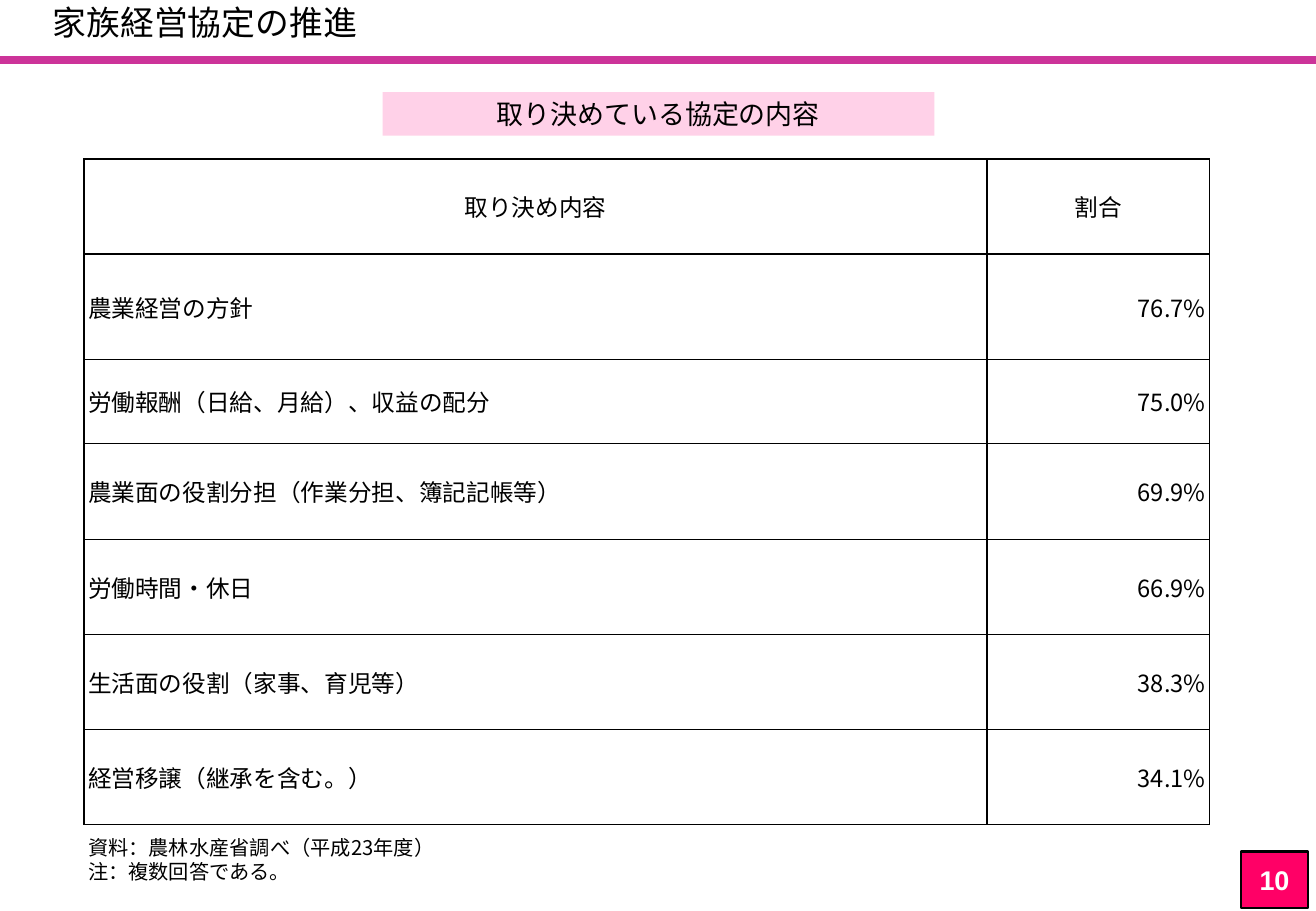
from lxml import etree
from pptx import Presentation
from pptx import util as u
from pptx.dml.color import RGBColor
from pptx.enum import shapes, text
from pptx.oxml import ns

EMU_PER_PX = 7620  # 120 px to the inch
ALIGN = text.PP_ALIGN


def px(*lengths):
    return [u.Emu(length * EMU_PER_PX) for length in lengths]


def color(hex_string):
    return RGBColor.from_string(hex_string)


def child(parent, tag, **attributes):
    return etree.SubElement(parent, ns.qn(tag), attributes)


class AgreementSlide:
    FONT = "Noto Sans CJK JP"
    INK = "000000"
    TIGHT = (4, 2, 4, 2)
    ROOMY = (12, 6, 12, 6)

    def __init__(self, deck):
        self.page = deck.slides.add_slide(deck.slide_layouts[5])

    def fill_text(self, frame, lines, size, align=ALIGN.LEFT, font=FONT, ink=INK, bold=False):
        frame.vertical_anchor = text.MSO_ANCHOR.MIDDLE
        for index, line in enumerate(lines):
            para = frame.add_paragraph() if index else frame.paragraphs[0]
            para.alignment = align
            span = para.add_run()
            span.text = line
            span.font.name = font
            span.font.size = u.Pt(size)
            span.font.bold = bold
            span.font.color.rgb = color(ink)
            child(span.font._element, "a:ea", typeface=font)

    def inset(self, target, margins):
        """Set the inner margins of a text frame or table cell."""
        (target.margin_left, target.margin_top,
         target.margin_right, target.margin_bottom) = px(*margins)

    def title(self, place, words, size, margins):
        box = self.page.shapes.title
        box.left, box.top, box.width, box.height = px(*place)
        frame = box.text_frame
        frame.auto_size = text.MSO_AUTO_SIZE.NONE
        frame.word_wrap = True
        self.inset(frame, margins)
        self.fill_text(frame, [words], size)

    def text_box(self, place, lines, size):
        frame = self.page.shapes.add_textbox(*px(*place)).text_frame
        frame.word_wrap = True
        self.inset(frame, self.TIGHT)
        self.fill_text(frame, lines, size)

    def label(self, kind, place, fill, words, alpha=None, outline=None, **style):
        """Add a filled shape with one centred line of text."""
        box = self.page.shapes.add_shape(kind, *px(*place))
        box.shadow.inherit = False
        box.fill.solid()
        box.fill.fore_color.rgb = color(fill)
        if alpha:
            fill_color = box._element.spPr.find(".//" + ns.qn("a:srgbClr"))
            child(fill_color, "a:alpha", val=str(alpha * 1000))
        if outline:
            box.line.color.rgb = color(outline)
            box.line.width = u.Pt(1.5)
        else:
            box.line.fill.background()
        box.text_frame.word_wrap = False
        self.inset(box.text_frame, self.ROOMY)
        self.fill_text(box.text_frame, [words], 16, ALIGN.CENTER, **style)
        return box

    def rule(self, ends, stroke, width):
        line = self.page.shapes.add_connector(shapes.MSO_CONNECTOR.STRAIGHT, *px(*ends))
        line.line.color.rgb = color(stroke)
        line.line.width = u.Pt(width)
        child(line._element.spPr, "a:effectLst")

    def border(self, cell):
        properties = cell._tc.get_or_add_tcPr()
        for side in "LRTB":
            edge = child(properties, f"a:ln{side}", w=str(u.Pt(1)))
            child(child(edge, "a:solidFill"), "a:srgbClr", val=self.INK)

    def table(self, corner, widths, heights, rows):
        place = px(*corner, sum(widths), sum(heights))
        grid = self.page.shapes.add_table(len(rows), len(widths), *place).table
        grid.first_row = grid.horz_banding = False
        for column, width in zip(grid.columns, px(*widths)):
            column.width = width
        for row, height in zip(grid.rows, px(*heights)):
            row.height = height
        for row_index, values in enumerate(rows):
            aligns = (ALIGN.LEFT, ALIGN.RIGHT) if row_index else (ALIGN.CENTER,) * 2
            for column_index, (value, align) in enumerate(zip(values, aligns)):
                cell = grid.cell(row_index, column_index)
                self.border(cell)
                cell.fill.background()
                self.inset(cell, self.TIGHT)
                cell.vertical_anchor = text.MSO_ANCHOR.MIDDLE
                self.fill_text(cell.text_frame, [value], 14, align)


def main():
    deck = Presentation()
    deck.slide_width, deck.slide_height = px(1300, 900)
    slide = AgreementSlide(deck)
    slide.title((0, -11, 1298, 66), "家族経営協定の推進", 20, (52, 6, 12, 6))
    slide.rule((0, 59, 1300, 59), "CC3399", 4.75)
    slide.label(shapes.MSO_SHAPE.RECTANGLE, (378, 91, 545, 43), "FF99CC",
                "取り決めている協定の内容", alpha=45)
    slide.table((83, 157), (892, 220), (94, 104, 83, 95, 94, 94, 94), [
        ("取り決め内容", "割合"),
        ("農業経営の方針", "76.7%"),
        ("労働報酬（日給、月給）、収益の配分", "75.0%"),
        ("農業面の役割分担（作業分担、簿記記帳等）", "69.9%"),
        ("労働時間・休日", "66.9%"),
        ("生活面の役割（家事、育児等）", "38.3%"),
        ("経営移譲（継承を含む。）", "34.1%"),
    ])
    slide.text_box((83, 822, 463, 54),
                   ["資料：農林水産省調べ（平成23年度）", "注：複数回答である。"], 12)
    page_number = slide.label(shapes.MSO_SHAPE.ROUNDED_RECTANGLE, (1226, 841, 66, 56),
                              "FF0066", "10", outline="000000",
                              font="Arial", ink="FFFFFF", bold=True)
    page_number.adjustments[0] = 0
    deck.save("out.pptx")


if __name__ == "__main__":
    main()
